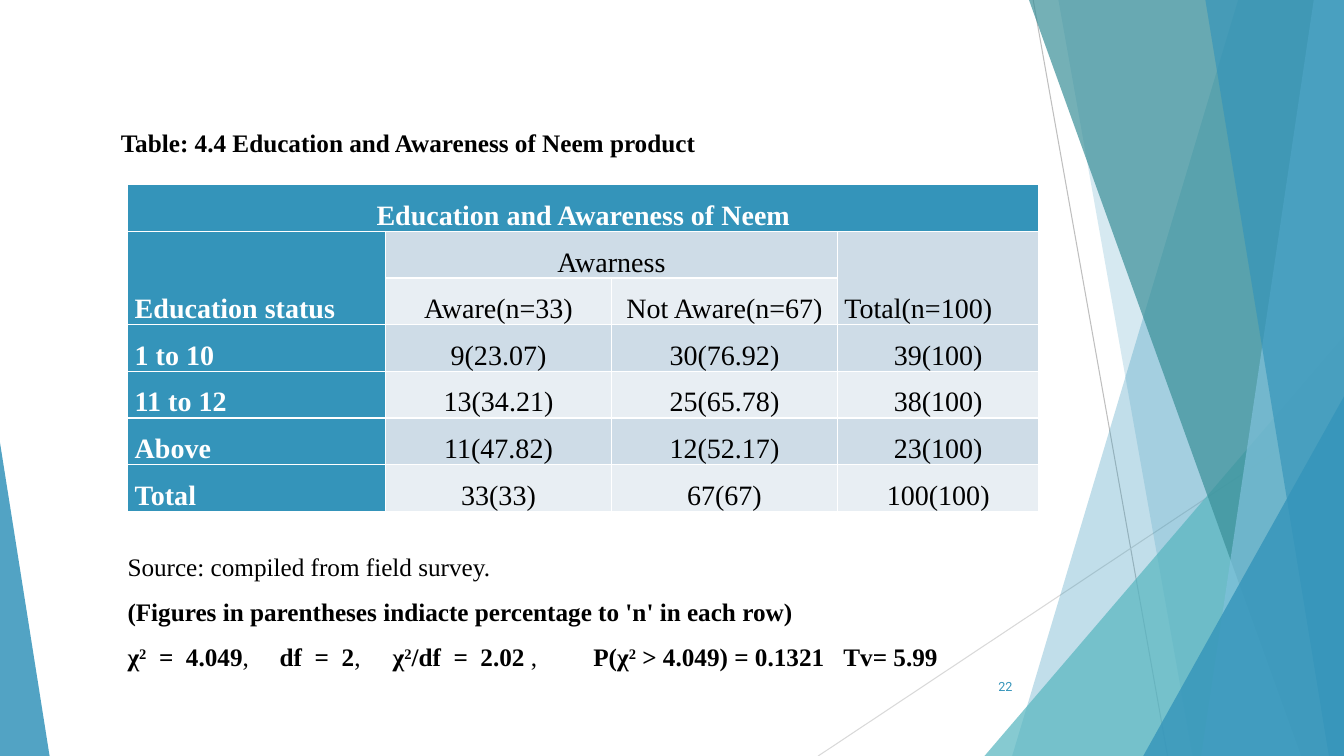
from dataclasses import dataclass

from lxml import etree
from pptx import Presentation
from pptx.dml.color import RGBColor
from pptx.enum.shapes import MSO_CONNECTOR, MSO_SHAPE
from pptx.enum.text import MSO_ANCHOR, PP_ALIGN
from pptx.oxml.ns import qn
from pptx.util import Inches, Pt

LINE = MSO_CONNECTOR.STRAIGHT
PEAK = MSO_SHAPE.ISOSCELES_TRIANGLE
LEFT, MID, RIGHT = PP_ALIGN.LEFT, PP_ALIGN.CENTER, PP_ALIGN.RIGHT
TOP, CENTRE, BASE = MSO_ANCHOR.TOP, MSO_ANCHOR.MIDDLE, MSO_ANCHOR.BOTTOM
COLS, ROWS = 160, 90


@dataclass(frozen=True)
class Theme:
    blue: str = "3494BA"
    teal: str = "58B6C0"
    deep: str = "3A8F98"
    sky: str = "7FC1DB"
    band: str = "CEDCE7"
    pale: str = "E8EEF3"
    grey: str = "BFBFBF"
    mist: str = "D9D9D9"
    black: str = "000000"
    white: str = "FFFFFF"
    serif: str = "Times New Roman"
    sans: str = "Roboto"
    cell: int = 20
    body: int = 18
    small: int = 9


class Page:
    def __init__(self, deck, theme):
        self.theme = theme
        self.wide, self.high = deck.slide_width, deck.slide_height
        self.slide = deck.slides.add_slide(deck.slide_layouts[6])
        self.shapes = self.slide.shapes

    def x(self, cols):
        return round(self.wide * cols / COLS)

    def y(self, rows):
        return round(self.high * rows / ROWS)

    def box(self, left, top, width, height):
        return self.x(left), self.y(top), self.x(width), self.y(height)

    def line(self, x1, y1, x2, y2, color):
        line = self.shapes.add_connector(LINE, self.x(x1), self.y(y1), self.x(x2), self.y(y2))
        line.line.color.rgb = RGBColor.from_string(color)
        line.line.width = Pt(0.75)
        etree.SubElement(line.element.spPr, qn("a:effectLst"))

    def tint(self, shape, color, alpha):
        shape.shadow.inherit = False
        shape.fill.solid()
        shape.fill.fore_color.rgb = RGBColor.from_string(color)
        shape.line.fill.background()
        node = shape.element.spPr.find(".//" + qn("a:srgbClr"))
        etree.SubElement(node, qn("a:alpha"), val=str(alpha * 1000))

    def shard(self, top, foot, color, alpha):
        pen = self.shapes.build_freeform(self.x(top), 0)
        edge = [(COLS, 0), (COLS, ROWS), (foot, ROWS)]
        pen.add_line_segments([(self.x(x), self.y(y)) for x, y in edge])
        self.tint(pen.convert_to_shape(), color, alpha)

    def peak(self, left, top, width, tip, color, alpha):
        shape = self.shapes.add_shape(PEAK, *self.box(left, top, width, ROWS - top))
        shape.adjustments[0] = tip
        self.tint(shape, color, alpha)

    def style(self, para, size, color, face=None, bold=False, align=LEFT, space=1):
        font = para.font
        font.name = face or self.theme.serif
        font.size = Pt(size)
        font.bold = bold
        font.color.rgb = RGBColor.from_string(color)
        para.alignment = align
        para.line_spacing = space

    def text(self, place, paras, anchor=TOP, stops=(), **look):
        frame = self.shapes.add_textbox(*self.box(*place)).text_frame
        frame.word_wrap = True
        frame.vertical_anchor = anchor
        for i, parts in enumerate(paras):
            para = frame.add_paragraph() if i else frame.paragraphs[0]
            self.style(para, **look)
            for words, mark in parts:
                run = para.add_run()
                run.text = words
                if mark:
                    run.font.bold = True
                if mark == "sup":
                    run.font._element.set("baseline", "30000")
        if stops:
            tabs = etree.SubElement(para._p.get_or_add_pPr(), qn("a:tabLst"))
            for stop in stops:
                etree.SubElement(tabs, qn("a:tab"), pos=str(Inches(stop)), algn="l")

    def table(self, left, top, widths, step, rows, spans):
        place = self.box(left, top, sum(widths), step * len(rows))
        grid = self.shapes.add_table(len(rows), len(widths), *place).table
        for col, width in zip(grid.columns, widths):
            col.width = self.x(width)
        for row in grid.rows:
            row.height = self.y(step)
        for r, row in enumerate(rows):
            for c, words in enumerate(row):
                self.cell(grid.cell(r, c), r, c, words)
        for r1, c1, r2, c2 in spans:
            grid.cell(r1, c1).merge(grid.cell(r2, c2))

    def cell(self, cell, r, c, words):
        theme = self.theme
        head = r == 0 or c == 0
        color = theme.blue if head else theme.band if r % 2 else theme.pale
        cell.fill.solid()
        cell.fill.fore_color.rgb = RGBColor.from_string(color)
        cell.vertical_anchor = BASE
        cell.margin_left = cell.margin_right = Inches(0.07)
        cell.margin_top = cell.margin_bottom = 0
        cell.text = words
        side = r and c == 0 or (r, c) == (1, 3)
        self.style(cell.text_frame.paragraphs[0], theme.cell,
                   theme.white if head else theme.black,
                   bold=head, align=LEFT if side else MID, space=1.5)


def main():
    deck = Presentation()
    deck.slide_width, deck.slide_height = Inches(13.33), Inches(7.5)
    theme = Theme()
    page = Page(deck, theme)

    page.line(123, 0, 139, ROWS, theme.grey)
    page.line(COLS, 48.4, 97.4, ROWS, theme.mist)
    page.shard(147.4, 120.5, theme.blue, 30)
    page.shard(126, 142, theme.blue, 20)
    page.peak(117.2, 40, 42.8, 1, theme.teal, 72)
    page.shard(122.5, 154.9, theme.deep, 70)
    page.shard(156.4, 143, theme.sky, 70)
    page.shard(143.5, 158.2, theme.blue, 65)
    page.peak(136.1, 47.2, 23.9, 1, theme.blue, 80)
    page.peak(0, 52.7, 5.9, 0, theme.blue, 85)

    rows = [
        ("Education and Awareness of Neem", "", "", ""),
        ("Education status", "Awarness", "", "Total(n=100)"),
        ("", "Aware(n=33)", "Not Aware(n=67)", ""),
        ("1 to 10", "9(23.07)", "30(76.92)", "39(100)"),
        ("11 to 12", "13(34.21)", "25(65.78)", "38(100)"),
        ("Above", "11(47.82)", "12(52.17)", "23(100)"),
        ("Total", "33(33)", "67(67)", "100(100)"),
    ]
    spans = [(0, 0, 0, 3), (1, 0, 2, 0), (1, 1, 1, 2), (1, 3, 2, 3)]
    page.table(15.2, 22, (30.7, 26.9, 26.9, 24), 5.54, rows, spans)

    page.text((13.2, 14.6, 72, 4.8), [[("Table: 4.4 Education and Awareness of Neem product", "b")]],
              size=theme.body, color=theme.black)
    notes = [
        [("Source: compiled from field survey.", "")],
        [("(Figures in parentheses indiacte percentage to 'n' in each row)", "b")],
        [("χ", "b"), ("2", "sup"), ("  =  4.049", "b"), (",\t", ""),
         ("df  =  2", "b"), (",\t", ""),
         ("χ", "b"), ("2", "sup"), ("/df  =  2.02", "b"), (" ,\t", ""),
         ("P(χ", "b"), ("2", "sup"), (" > 4.049) = 0.1321\tTv= 5.99", "b")],
    ]
    page.text((14, 63.2, 109, 17.5), notes, stops=(1.51, 2.63, 4.62, 7.1),
              size=theme.body, color=theme.black, space=1.5)
    page.text((112.7, 79.3, 9, 4.8), [[("22", "")]], CENTRE,
              size=theme.small, color=theme.blue, face=theme.sans, align=RIGHT)
    deck.save("out.pptx")


if __name__ == "__main__":
    main()
